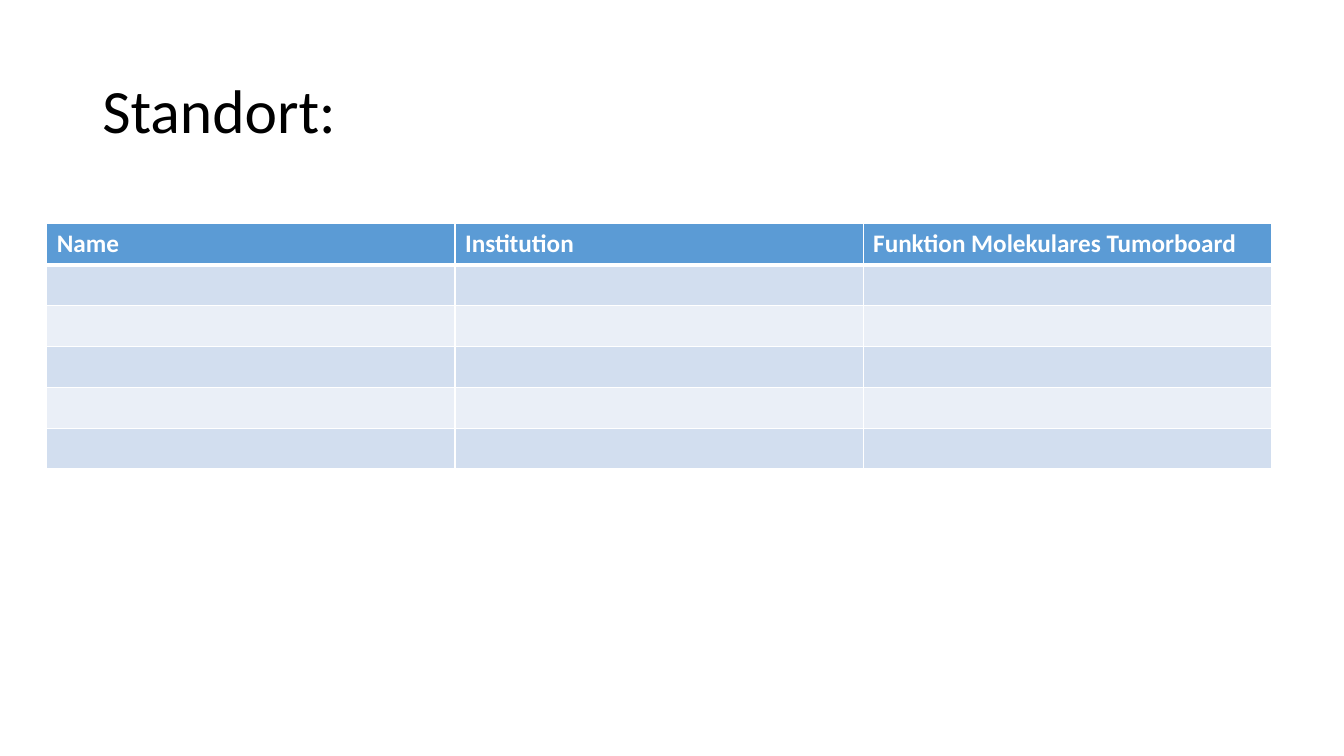
from lxml import etree
from pptx import Presentation
from pptx import util as u
from pptx.dml import color
from pptx.enum import text
from pptx.oxml import ns


def hue(code):
    return color.RGBColor.from_string(code)


def write(frame, words, size=18, tint="000000", bold=False, space=1.0):
    par = frame.paragraphs[0]
    par.line_spacing = space
    run = par.add_run()
    run.text = words
    run.font.name = "Calibri"
    run.font.size = u.Pt(size)
    run.font.bold = bold
    run.font.color.rgb = hue(tint)


deck = Presentation()
deck.slide_width, deck.slide_height = u.Cm(33.87), u.Cm(19.05)
slide = deck.slides.add_slide(deck.slide_layouts[6])

title = slide.shapes.add_textbox(u.Cm(2.33), u.Cm(1.01), u.Cm(29.21), u.Cm(3.68))
title.text_frame.word_wrap = True
title.text_frame.vertical_anchor = text.MSO_ANCHOR.MIDDLE
write(title.text_frame, "Standort:", size=44, space=0.9)

heads = ["Name", "Institution", "Funktion Molekulares Tumorboard"]
count = 6
grid = slide.shapes.add_table(
    count, len(heads), u.Cm(1.18), u.Cm(5.64), u.Cm(30.86), u.Cm(6.18)
).table

for row in range(count):
    grid.rows[row].height = u.Cm(1.03)
    shade = "5B9BD5" if row == 0 else ("EAEFF7", "D2DEEF")[row % 2]
    for col, head in enumerate(heads):
        cell = grid.cell(row, col)
        props = cell._tc.get_or_add_tcPr()
        for side in "LRTB":
            thick = (row, side) in [(0, "B"), (1, "T")]
            line = etree.SubElement(props, ns.qn("a:ln" + side), w=str(u.Pt(3 if thick else 1)))
            fill = etree.SubElement(line, ns.qn("a:solidFill"))
            etree.SubElement(fill, ns.qn("a:srgbClr"), val="FFFFFF")
        cell.fill.solid()
        cell.fill.fore_color.rgb = hue(shade)
        if row == 0:
            write(cell.text_frame, head, tint="FFFFFF", bold=True)

deck.save("out.pptx")
